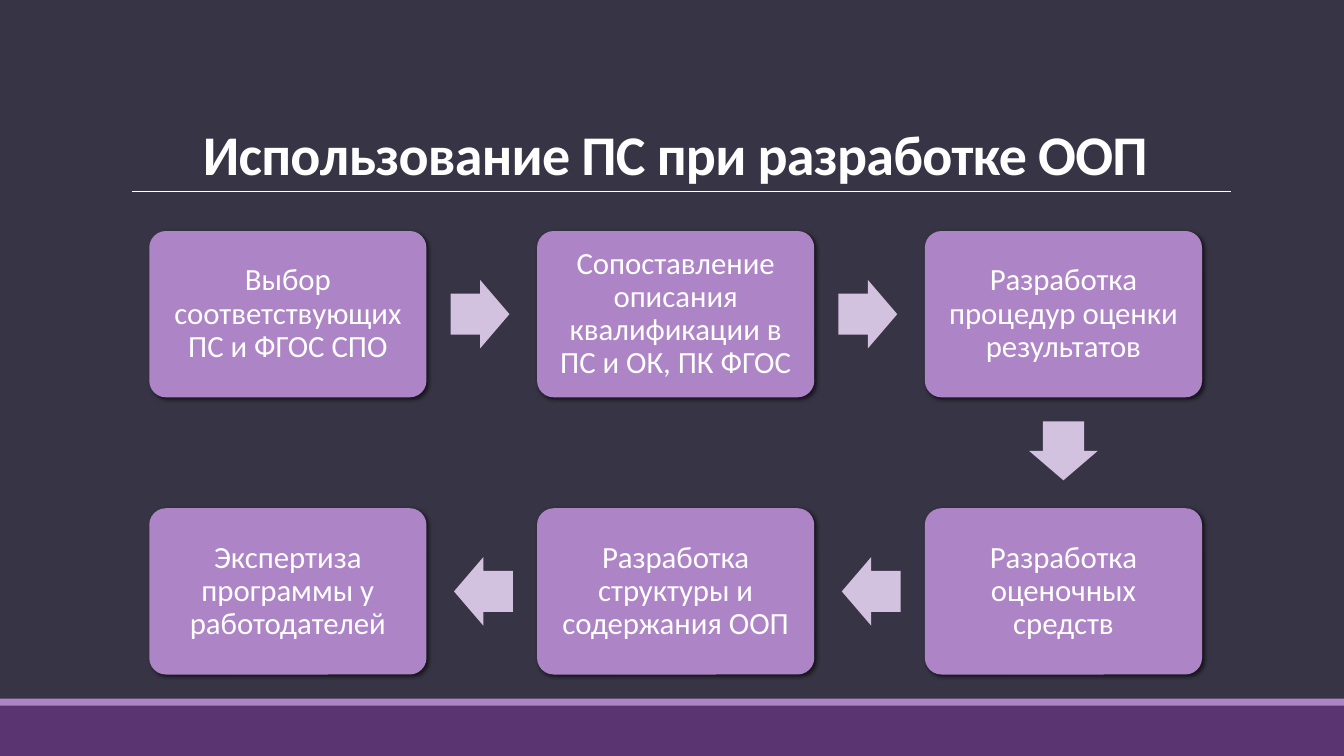
"""Build a slide showing six process steps joined by arrows."""
from dataclasses import dataclass
from itertools import pairwise
from typing import Any

from lxml import etree
from pptx import Presentation
from pptx import util as u
from pptx.dml.color import RGBColor
from pptx.enum import shapes, text
from pptx.oxml import ns


@dataclass(frozen=True)
class Theme:
    background: str = "373545"
    footer: str = "5A3471"
    accent: str = "AD84C6"
    arrow: str = "D3C2DF"
    ink: str = "FFFFFF"
    shade: str = "000000"
    font: str = "Calibri"
    title_size: float = 40
    step_size: float = 22


@dataclass(frozen=True)
class Box:
    left: float
    top: float
    width: float
    height: float

    def points(self) -> list[u.Length]:
        return [u.Pt(v) for v in (self.left, self.top, self.width, self.height)]


@dataclass(frozen=True)
class Step:
    wording: str
    column: int
    row: int

    @property
    def center(self) -> tuple[float, float]:
        return (FIRST_LEFT + self.column * COLUMN_PITCH + CARD_WIDTH / 2,
                FIRST_TOP + self.row * ROW_PITCH + CARD_HEIGHT / 2)


THEME = Theme()
SLIDE_WIDTH, SLIDE_HEIGHT = 960, 540
FIRST_LEFT, FIRST_TOP = 106.6, 165
COLUMN_PITCH, ROW_PITCH = 277, 198
CARD_WIDTH, CARD_HEIGHT = 198, 118.8
ARROW_LENGTH, ARROW_BREADTH, ARROW_GAP = 42, 49, 17.3

STEPS = [
    Step("Выбор соответствующих ПС и ФГОС СПО", 0, 0),
    Step("Сопоставление описания квалификации в ПС и ОК, ПК ФГОС", 1, 0),
    Step("Разработка процедур оценки результатов", 2, 0),
    Step("Разработка оценочных средств", 2, 1),
    Step("Разработка структуры и содержания ООП", 1, 1),
    Step("Экспертиза программы у работодателей", 0, 1),
]
STEP_INSETS = {f"margin_{side}": u.Pt(6.6) for side in ("left", "right", "top", "bottom")}


def apply(target: Any, formats: dict[str, Any]) -> None:
    for attribute, value in formats.items():
        setattr(target, attribute, value)


def centered(center: tuple[float, float], width: float, height: float) -> Box:
    return Box(center[0] - width / 2, center[1] - height / 2, width, height)


def write(frame: Any, wording: str, size: float, spacing: float, formats: dict[str, Any],
          bold: bool = False) -> Any:
    apply(frame, {"word_wrap": True, **formats})
    paragraph = frame.paragraphs[0]
    apply(paragraph, {"alignment": text.PP_ALIGN.CENTER, "line_spacing": spacing})
    run = paragraph.add_run()
    run.text = wording
    apply(run.font, {"name": THEME.font, "size": u.Pt(size), "bold": bold})
    run.font.color.rgb = RGBColor.from_string(THEME.ink)
    return run


def draw_shape(slide: Any, kind: shapes.MSO_SHAPE, box: Box, color: str,
               adjustments: tuple[float, ...] = (), rotation: float = 0) -> Any:
    figure = slide.shapes.add_shape(kind, *box.points())
    figure.fill.solid()
    figure.fill.fore_color.rgb = RGBColor.from_string(color)
    figure.line.fill.background()
    figure.shadow.inherit = False
    figure.rotation = rotation
    for index, value in enumerate(adjustments):
        figure.adjustments[index] = value
    return figure


def cast_shadow(card: Any) -> None:
    effects = card._element.spPr.find(ns.qn("a:effectLst"))
    shadow = etree.SubElement(effects, ns.qn("a:outerShdw"), blurRad=str(u.Pt(3)),
                              dist=str(u.Pt(2)), dir="2700000", rotWithShape="0")
    shade = etree.SubElement(shadow, ns.qn("a:srgbClr"), val=THEME.shade)
    etree.SubElement(shade, ns.qn("a:alpha"), val="60000")


def draw_step(slide: Any, step: Step) -> None:
    card = draw_shape(slide, shapes.MSO_SHAPE.ROUNDED_RECTANGLE,
                      centered(step.center, CARD_WIDTH, CARD_HEIGHT), THEME.accent, (0.1,))
    cast_shadow(card)
    write(card.text_frame, step.wording, THEME.step_size, 0.9,
          {"vertical_anchor": text.MSO_ANCHOR.MIDDLE, **STEP_INSETS})


def draw_arrow(slide: Any, source: Step, target: Step) -> None:
    across, down = target.column - source.column, target.row - source.row
    reach = ARROW_GAP + ARROW_LENGTH / 2
    x, y = source.center
    center = (x + across * (CARD_WIDTH / 2 + reach), y + down * (CARD_HEIGHT / 2 + reach))
    rotation = 90 if down else 0 if across > 0 else 180
    draw_shape(slide, shapes.MSO_SHAPE.RIGHT_ARROW,
               centered(center, ARROW_LENGTH, ARROW_BREADTH), THEME.arrow, (0.6, 0.5), rotation)


def draw_frame(slide: Any) -> None:
    slide.background.fill.solid()
    slide.background.fill.fore_color.rgb = RGBColor.from_string(THEME.background)
    for box, color in ((Box(0, 504, SLIDE_WIDTH, 36), THEME.footer),
                       (Box(0, 499, SLIDE_WIDTH, 5), THEME.accent)):
        draw_shape(slide, shapes.MSO_SHAPE.RECTANGLE, box, color)
    rule = slide.shapes.add_connector(shapes.MSO_CONNECTOR.STRAIGHT, u.Pt(94.3), u.Pt(136.8),
                                      u.Pt(879), u.Pt(136.8))
    rule.line.width = u.Pt(0.5)
    rule.line.color.rgb = RGBColor.from_string(THEME.ink)
    etree.SubElement(rule._element.spPr, ns.qn("a:effectLst"))


def draw_title(slide: Any) -> None:
    heading = slide.shapes.add_textbox(*Box(86.4, 22.3, 792, 114.5).points())
    run = write(heading.text_frame, "Использование ПС при разработке ООП", THEME.title_size,
                0.85, {"vertical_anchor": text.MSO_ANCHOR.BOTTOM}, bold=True)
    run.font._element.set("spc", "-50")


def main() -> None:
    deck = Presentation()
    apply(deck, {"slide_width": u.Pt(SLIDE_WIDTH), "slide_height": u.Pt(SLIDE_HEIGHT)})
    slide = deck.slides.add_slide(deck.slide_layouts[6])
    draw_frame(slide)
    draw_title(slide)
    for step in STEPS:
        draw_step(slide, step)
    for source, target in pairwise(STEPS):
        draw_arrow(slide, source, target)
    deck.save("out.pptx")


if __name__ == "__main__":
    main()
